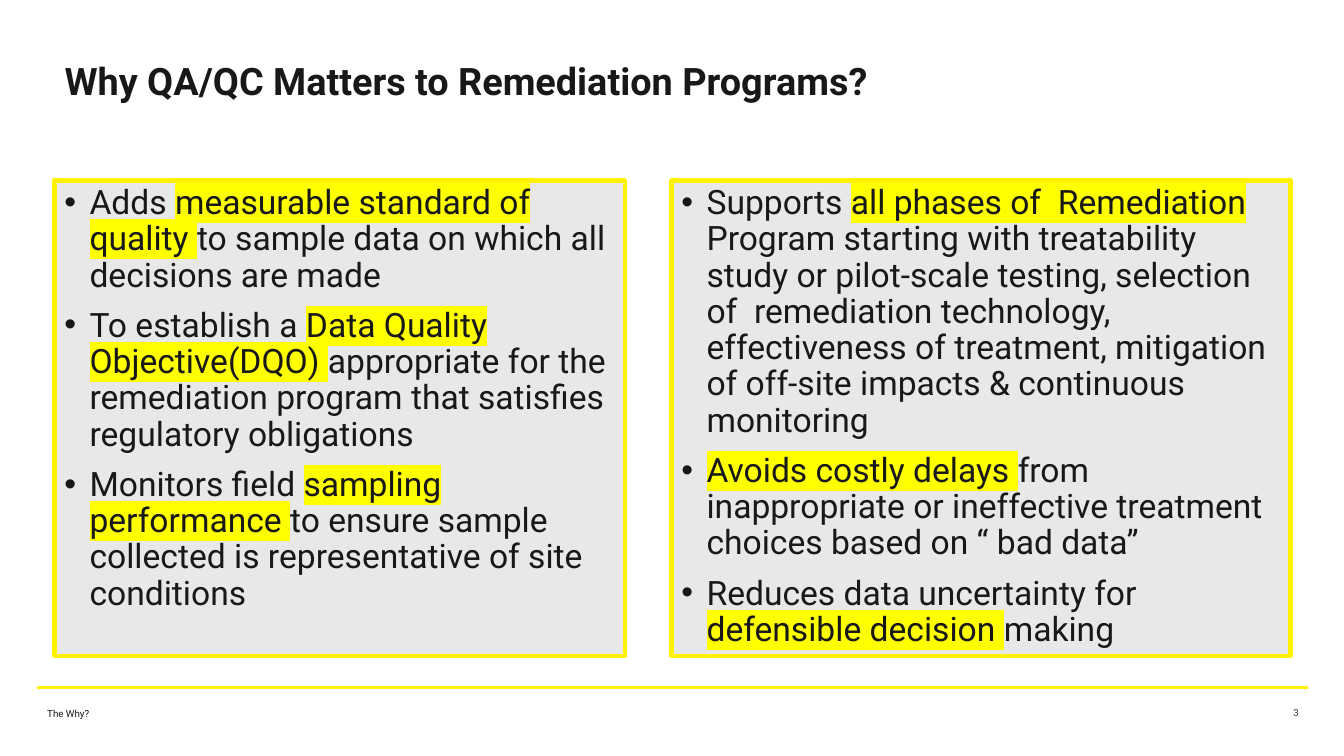
from dataclasses import dataclass

from lxml.etree import SubElement
from pptx import Presentation
from pptx.dml.color import RGBColor as RGB
from pptx.enum.shapes import MSO_CONNECTOR as CONNECTOR, MSO_SHAPE as SHAPE
from pptx.enum.text import MSO_ANCHOR as ANCHOR, MSO_AUTO_SIZE as AUTO_SIZE, PP_ALIGN as ALIGN
from pptx.oxml.ns import qn
from pptx.util import Inches, Pt


@dataclass(frozen=True)
class Theme:
    font: str = "Roboto"
    ink: str = "181818"
    number: str = "3C3C3C"
    panel: str = "E8E8E8"
    accent: str = "FFF200"
    marker: str = "FFFF00"
    title_size: float = 27
    body_size: float = 24
    footer_size: float = 7


THEME = Theme()
WIDTH, HEIGHT = 13.33, 7.5
TITLE_BOX = (0.54, 0.57, 11.78, 0.57)
PANEL_TOP, PANEL_HEIGHT = 1.79, 4.72
RULE_LEFT, RULE_RIGHT, RULE_Y = 0.37, 12.97, 6.82
FOOTER_BOX = (RULE_LEFT, 6.97, 1.51, 0.4)
NUMBER_BOX = (9.98, 6.96, 3, 0.4)
INDENT = 0.25

# Each bullet is a list of pieces; those in a tuple are highlighted.
PANELS = [
    (0.54, 5.66, [
        ["Adds ", ("measurable standard of quality ",),
         "to sample data on which all decisions are made"],
        ["To establish a ", ("Data Quality Objective(DQO) ",),
         "appropriate for the remediation program that satisfies regulatory obligations"],
        ["Monitors field ", ("sampling performance ",),
         "to ensure sample collected is representative of site conditions"],
    ]),
    (6.66, 6.14, [
        ["Supports ", ("all phases of  Remediation ",),
         "Program starting with treatability study or pilot-scale testing, "
         "selection of  remediation technology, effectiveness of treatment, "
         "mitigation of off-site impacts & continuous monitoring"],
        [("Avoids costly delays ",),
         "from inappropriate or ineffective treatment choices based on “ bad data”"],
        ["Reduces data uncertainty for ", ("defensible decision ",), "making"],
    ]),
]


def inches(box):
    return [Inches(v) for v in box]


def add_run(p, text, size, color=THEME.ink, bold=False, highlight=None):
    r = p.add_run()
    r.text = text
    r.font.size = Pt(size)
    r.font.bold = bold
    r.font.color.rgb = RGB.from_string(color)
    if highlight:
        rPr = r.font._element
        mark = SubElement(rPr, qn("a:highlight"))
        SubElement(mark, qn("a:srgbClr"), val=highlight)
    r.font.name = THEME.font


def add_bullet(p):
    pPr = p._p.get_or_add_pPr()
    pPr.set("marL", str(Inches(INDENT)))
    pPr.set("indent", str(-Inches(INDENT)))
    SubElement(pPr, qn("a:buFont"), typeface="Arial")
    SubElement(pPr, qn("a:buChar"), char="•")


def prepare_frame(sp):
    tf = sp.text_frame
    tf.word_wrap = True
    tf.auto_size = AUTO_SIZE.NONE
    tf.vertical_anchor = ANCHOR.TOP
    tf.margin_left = tf.margin_right = Inches(0.1)
    tf.margin_top = tf.margin_bottom = Inches(0.05)
    return tf


def set_title(slide, box, text):
    sp = slide.shapes.title
    sp.left, sp.top, sp.width, sp.height = inches(box)
    p = prepare_frame(sp).paragraphs[0]
    p.alignment = ALIGN.LEFT
    p.line_spacing = 0.9
    add_run(p, text, THEME.title_size, bold=True)


def add_panel(slide, box, bullets):
    sp = slide.shapes.add_shape(SHAPE.RECTANGLE, *inches(box))
    sp.shadow.inherit = False
    sp.fill.solid()
    sp.fill.fore_color.rgb = RGB.from_string(THEME.panel)
    sp.line.color.rgb = RGB.from_string(THEME.accent)
    sp.line.width = Pt(3)
    tf = prepare_frame(sp)
    for i, pieces in enumerate(bullets):
        p = tf.add_paragraph() if i else tf.paragraphs[0]
        add_bullet(p)
        p.alignment = ALIGN.LEFT
        p.line_spacing = 0.9
        p.space_before = Pt(10 if i else 0)
        for piece in pieces:
            marked = isinstance(piece, tuple)
            add_run(p, piece[0] if marked else piece, THEME.body_size,
                    highlight=THEME.marker if marked else None)


def add_label(slide, box, text, color=THEME.ink, align=ALIGN.LEFT):
    p = prepare_frame(slide.shapes.add_textbox(*inches(box))).paragraphs[0]
    p.alignment = align
    add_run(p, text, THEME.footer_size, color)


def add_footer(slide, text, number):
    ends = inches((RULE_LEFT, RULE_Y, RULE_RIGHT, RULE_Y))
    rule = slide.shapes.add_connector(CONNECTOR.STRAIGHT, *ends)
    rule.line.color.rgb = RGB.from_string(THEME.accent)
    rule.line.width = Pt(2.25)
    SubElement(rule._element.spPr, qn("a:effectLst"))
    add_label(slide, FOOTER_BOX, text)
    add_label(slide, NUMBER_BOX, number, THEME.number, ALIGN.RIGHT)


def main():
    prs = Presentation()
    prs.slide_width, prs.slide_height = inches((WIDTH, HEIGHT))
    slide = prs.slides.add_slide(prs.slide_layouts.get_by_name("Title Only"))
    set_title(slide, TITLE_BOX, "Why QA/QC Matters to Remediation Programs?")
    for left, width, bullets in PANELS:
        add_panel(slide, (left, PANEL_TOP, width, PANEL_HEIGHT), bullets)
    add_footer(slide, "The Why?", "3")
    prs.save("out.pptx")


if __name__ == "__main__":
    main()
